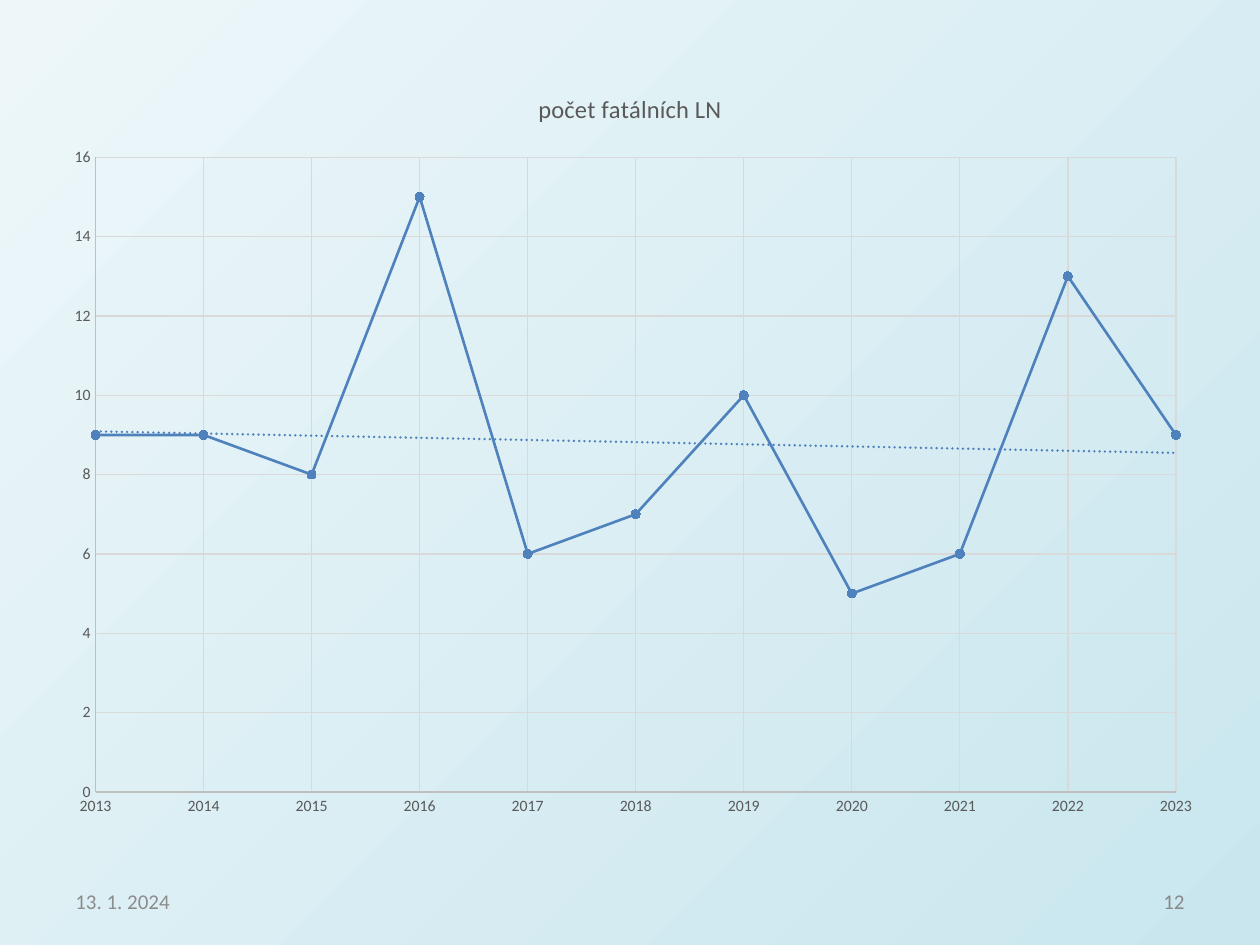
"""Build a slide with a smooth scatter chart of yearly counts and a linear trend."""
from lxml import etree
from pptx import Presentation
from pptx.chart.data import XyChartData
from pptx.dml.color import RGBColor
from pptx.enum import chart as charts, text
from pptx.oxml import parse_xml
from pptx.oxml.ns import nsdecls, qn
from pptx.util import Cm, Pt

TITLE = "počet fatálních LN"
FIRST_YEAR = 2013
COUNTS = [9, 9, 8, 15, 6, 7, 10, 5, 6, 13, 9]
LAST_YEAR = FIRST_YEAR + len(COUNTS) - 1
FONT = "Calibri"
BLUE = RGBColor(0x4F, 0x81, 0xBD)
LABEL = RGBColor(0x59, 0x59, 0x59)
AXIS = RGBColor(0xBF, 0xBF, 0xBF)
GRID = RGBColor(0xD9, 0xD9, 0xD9)
BACKGROUND = [RGBColor(0xED, 0xF7, 0xF9), RGBColor(0xC9, 0xE6, 0xEE)]
FOOTERS = [
    ("13. 1. 2024", 1.27, text.PP_ALIGN.LEFT, RGBColor(0x8C, 0x8C, 0x8C)),
    ("12", 18.21, text.PP_ALIGN.RIGHT, RGBColor(0x89, 0x89, 0x89)),
]
AXES = {"category_axis": (FIRST_YEAR, LAST_YEAR, 1), "value_axis": (0, 16, 2)}
PLOT_FRAME = {"x": 0.04, "y": 0.12, "w": 0.93, "h": 0.83}


def style_font(font, size, color):
    font.name, font.size, font.bold = FONT, Pt(size), False
    font.color.rgb = color


def style_line(line, color, width):
    line.color.rgb = color
    line.width = Pt(width)


def add_footer(slide, wording, left, alignment, color):
    box = slide.shapes.add_textbox(Cm(left), Cm(17.65), Cm(5.92), Cm(1.02))
    frame = box.text_frame
    frame.word_wrap = True
    frame.vertical_anchor = text.MSO_ANCHOR.MIDDLE
    frame.text = wording
    paragraph = frame.paragraphs[0]
    paragraph.alignment = alignment
    style_font(paragraph.runs[0].font, 12, color)


def style_axis(axis, minimum, maximum, step):
    axis.minimum_scale, axis.maximum_scale, axis.major_unit = minimum, maximum, step
    axis.major_tick_mark = axis.minor_tick_mark = charts.XL_TICK_MARK.NONE
    axis.has_major_gridlines = True
    style_line(axis.major_gridlines.format.line, GRID, 0.75)
    style_line(axis.format.line, AXIS, 0.75)
    style_font(axis.tick_labels.font, 9, LABEL)
    axis.tick_labels.number_format = "General"
    axis.tick_labels.number_format_is_linked = False


def style_series(series):
    series.smooth = True
    style_line(series.format.line, BLUE, 1.5)
    series.marker.style = charts.XL_MARKER_STYLE.CIRCLE
    series.marker.size = 5
    series.marker.format.fill.solid()
    series.marker.format.fill.fore_color.rgb = BLUE
    style_line(series.marker.format.line, BLUE, 0.75)


def add_trend(series):
    trend = parse_xml(
        f'<c:trendline {nsdecls("c", "a")}><c:spPr><a:ln w="{Pt(1.5)}" cap="rnd">'
        f'<a:solidFill><a:srgbClr val="{BLUE}"/></a:solidFill><a:prstDash val="sysDot"/>'
        '</a:ln></c:spPr><c:trendlineType val="linear"/>'
        '<c:dispRSqr val="0"/><c:dispEq val="0"/></c:trendline>'
    )
    series._element.find(qn("c:xVal")).addprevious(trend)


def place_plot(chart):
    plot_area = chart._chartSpace.chart.plotArea
    for layout in plot_area.findall(qn("c:layout")):
        plot_area.remove(layout)
    layout = etree.Element(qn("c:layout"))
    manual = etree.SubElement(layout, qn("c:manualLayout"))
    settings = {"layoutTarget": "inner", "xMode": "edge", "yMode": "edge", **PLOT_FRAME}
    for name, value in settings.items():
        etree.SubElement(manual, qn(f"c:{name}")).set("val", str(value))
    plot_area.insert(0, layout)


def add_scatter(slide):
    data = XyChartData()
    points = data.add_series(TITLE)
    for year, count in enumerate(COUNTS, FIRST_YEAR):
        points.add_data_point(year, count)
    chart = slide.shapes.add_chart(
        charts.XL_CHART_TYPE.XY_SCATTER_SMOOTH,
        Cm(0.99), Cm(1.32), Cm(23.42), Cm(15.42), data,
    ).chart
    style_font(chart.font, 10, RGBColor(0, 0, 0))
    chart.has_legend = False
    chart.has_title = True
    title = chart.chart_title
    title.include_in_layout = False
    title.text_frame.text = TITLE
    style_font(title.text_frame.paragraphs[0].runs[0].font, 14, LABEL)
    for name, scale in AXES.items():
        style_axis(getattr(chart, name), *scale)
    plot = chart.plots[0]
    plot.vary_by_categories = False
    style_series(plot.series[0])
    add_trend(plot.series[0])
    place_plot(chart)


def main():
    presentation = Presentation()
    presentation.slide_width, presentation.slide_height = Cm(25.4), Cm(19.05)
    slide = presentation.slides.add_slide(presentation.slide_layouts[6])
    fill = slide.background.fill
    fill.gradient()
    fill.gradient_angle = 315
    for position, (stop, color) in enumerate(zip(fill.gradient_stops, BACKGROUND)):
        stop.position = position
        stop.color.rgb = color
    for footer in FOOTERS:
        add_footer(slide, *footer)
    add_scatter(slide)
    presentation.save("out.pptx")


if __name__ == "__main__":
    main()
